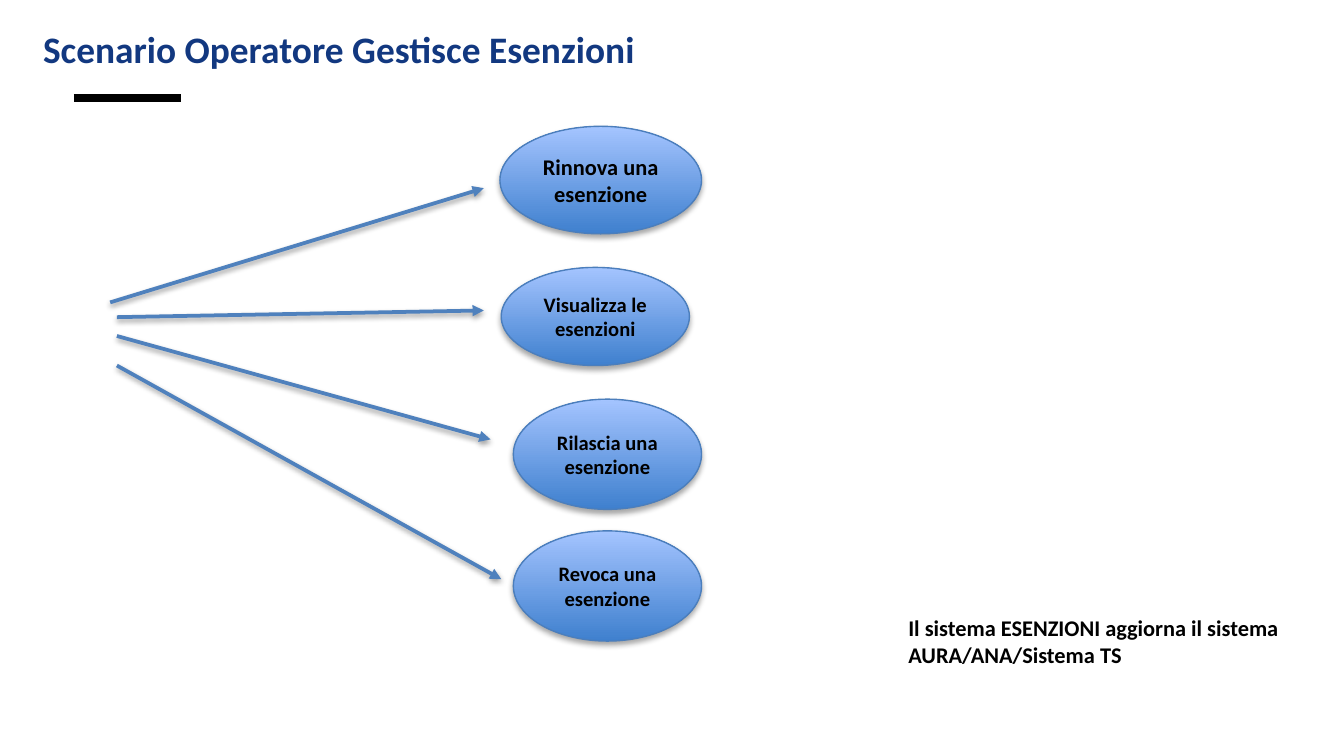
from dataclasses import dataclass

from lxml.etree import SubElement
from pptx import Presentation
from pptx.dml.color import RGBColor
from pptx.enum.shapes import MSO_CONNECTOR, MSO_SHAPE
from pptx.enum.text import MSO_ANCHOR, MSO_AUTO_SIZE, PP_ALIGN
from pptx.oxml.ns import qn
from pptx.util import Inches, Pt


@dataclass(frozen=True)
class Theme:
    """Colours, font and type sizes of the slide."""
    font: str = "Calibri"
    title: str = "123880"
    ink: str = "000000"
    gradient: tuple = ("3F80CE", "A4C4FF")
    outline: str = "4B7EBC"
    arrow: str = "4F81BD"
    title_size: int = 20
    text_size: int = 12
    small_size: int = 11


THEME = Theme()

USE_CASES = [
    ("Rinnova una esenzione", (3.72, 0.94, 1.5, 0.8), THEME.text_size),
    ("Visualizza le esenzioni", (3.73, 1.99, 1.4, 0.73), THEME.small_size),
    ("Rilascia una esenzione", (3.82, 2.97, 1.4, 0.82), THEME.small_size),
    ("Revoca una esenzione", (3.82, 3.95, 1.4, 0.82), THEME.small_size),
]

ARROWS = [
    ((0.82, 2.25), (3.6, 1.4)),
    ((0.87, 2.36), (3.6, 2.31)),
    ((0.87, 2.5), (3.65, 3.27)),
    ((0.87, 2.72), (3.73, 4.31)),
]


def write_text(frame, text, size, color, align=PP_ALIGN.LEFT):
    """Fill a text frame with one bold paragraph."""
    frame.text = text
    frame.word_wrap = True
    paragraph = frame.paragraphs[0]
    paragraph.alignment = align
    font = paragraph.runs[0].font
    font.name = THEME.font
    font.size = Pt(size)
    font.bold = True
    font.color.rgb = RGBColor.from_string(color)


def add_shadow(effects, opacity, distance):
    """Put a soft downward shadow into an effect list."""
    shadow = SubElement(effects, qn("a:outerShdw"), blurRad=str(Pt(3.1)),
                        dist=str(Pt(distance)), dir="5400000", rotWithShape="0")
    color = SubElement(shadow, qn("a:srgbClr"), val=THEME.ink)
    SubElement(color, qn("a:alpha"), val=str(opacity * 1000))


def add_title(slide, text):
    """Place the slide title in its placeholder."""
    title = slide.shapes.title
    title.left, title.top = Inches(0.22), Inches(0)
    title.width, title.height = Inches(9.01), Inches(0.73)
    write_text(title.text_frame, text, THEME.title_size, THEME.title)
    title.text_frame.auto_size = MSO_AUTO_SIZE.NONE
    title.text_frame.vertical_anchor = MSO_ANCHOR.MIDDLE


def add_line(slide, start, end, color, width):
    """Draw a straight line and return it with its empty effect list."""
    line = slide.shapes.add_connector(
        MSO_CONNECTOR.STRAIGHT, *map(Inches, start + end))
    line.line.color.rgb = RGBColor.from_string(color)
    line.line.width = Pt(width)
    effects = SubElement(line._element.spPr, qn("a:effectLst"))
    return line, effects


def add_arrow(slide, start, end):
    """Draw a shadowed arrow from the operator to a use case."""
    arrow, effects = add_line(slide, start, end, THEME.arrow, 2)
    SubElement(arrow.line._get_or_add_ln(), qn("a:tailEnd"), type="triangle")
    add_shadow(effects, 38, 1.6)


def add_use_case(slide, label, bounds, size):
    """Draw a use case as a labelled gradient ellipse."""
    ellipse = slide.shapes.add_shape(MSO_SHAPE.OVAL, *map(Inches, bounds))
    ellipse.fill.gradient()
    ellipse.fill.gradient_angle = 90
    for stop, color in zip(ellipse.fill.gradient_stops, THEME.gradient):
        stop.color.rgb = RGBColor.from_string(color)
    ellipse.line.color.rgb = RGBColor.from_string(THEME.outline)
    ellipse.line.width = Pt(0.75)
    ellipse.shadow.inherit = False
    add_shadow(ellipse._element.spPr.find(qn("a:effectLst")), 35, 1.8)
    write_text(ellipse.text_frame, label, size, THEME.ink, PP_ALIGN.CENTER)
    ellipse.text_frame.vertical_anchor = MSO_ANCHOR.MIDDLE


def add_note(slide, text, bounds):
    """Add a wrapped remark beside the diagram."""
    note = slide.shapes.add_textbox(*map(Inches, bounds))
    write_text(note.text_frame, text, THEME.text_size, THEME.ink)
    note.text_frame.auto_size = MSO_AUTO_SIZE.SHAPE_TO_FIT_TEXT


def main():
    """Build the use case slide and save it."""
    deck = Presentation()
    deck.slide_width = Inches(10)
    deck.slide_height = Inches(10 * 9 / 16)
    slide = deck.slides.add_slide(deck.slide_layouts.get_by_name("Title Only"))
    add_title(slide, "Scenario Operatore Gestisce Esenzioni")
    add_line(slide, (0.55, 0.73), (1.35, 0.73), THEME.ink, 4)
    for label, bounds, size in USE_CASES:
        add_use_case(slide, label, bounds, size)
    for start, end in ARROWS:
        add_arrow(slide, start, end)
    add_note(slide, "Il sistema ESENZIONI aggiorna il sistema AURA/ANA/Sistema TS",
             (6.66, 4.52, 3.41, 0.5))
    deck.save("out.pptx")


if __name__ == "__main__":
    main()
